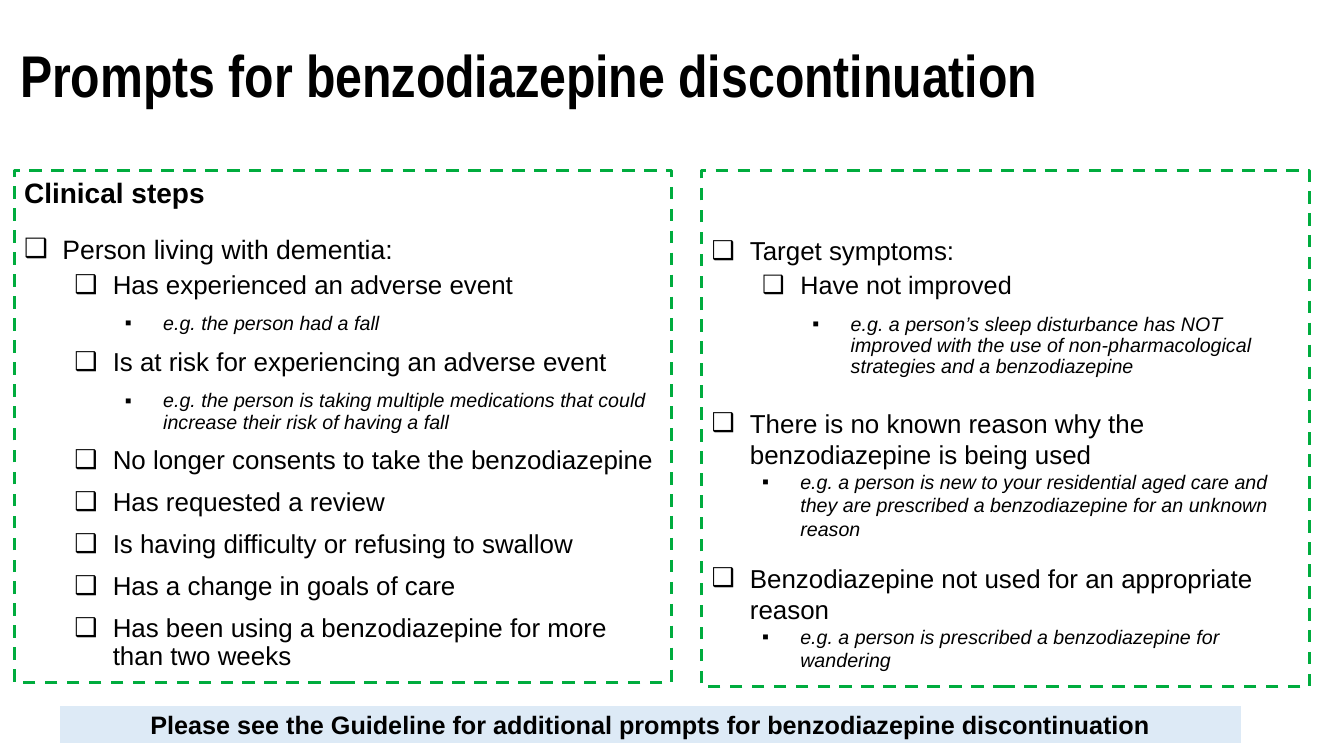
from pptx import Presentation
from pptx.dml.color import RGBColor
from pptx.enum.dml import MSO_LINE
from pptx.enum.shapes import MSO_SHAPE
from pptx.enum.text import MSO_ANCHOR, PP_ALIGN
from pptx.oxml.ns import qn
from pptx.util import Inches, Pt
from lxml import etree


def rgb(value):
    return RGBColor.from_string(value)


def add_text(p, text, size, bold=False, italic=False, font="Arial"):
    r = p.add_run()
    r.text = text
    r.font.size = Pt(size)
    r.font.name = font
    r.font.bold = bold
    r.font.italic = italic
    r.font.color.rgb = rgb("000000")


prs = Presentation()
prs.slide_width, prs.slide_height = Inches(13.33), Inches(7.5)
s = prs.slides.add_slide(prs.slide_layouts[6])

# Title
title = s.shapes.add_textbox(Inches(0.1), Inches(0.41), Inches(10.51), Inches(0.81))
title.text_frame.word_wrap = True
p = title.text_frame.paragraphs[0]
p.line_spacing = 0.9
add_text(p, "Prompts for benzodiazepine discontinuation", 42, bold=True, font="Arial Narrow")

# Prompts: level, bullet, size, line spacing, space before, text
BOX, SQUARE = "❑", "▪"
clinical_steps = [
    (0, None, 20, 1, 0, "Clinical steps"),
    (0, BOX, 19, 1, 17, "Person living with dementia:"),
    (1, BOX, 18.5, 0.9, 5, "Has experienced an adverse event"),
    (2, SQUARE, 14, 0.9, 10, "e.g. the person had a fall"),
    (1, BOX, 18.5, 0.9, 10, "Is at risk for experiencing an adverse event"),
    (2, SQUARE, 14, 0.9, 10, "e.g. the person is taking multiple medications that could "
                             "increase their risk of having a fall"),
    (1, BOX, 18.5, 0.9, 10, "No longer consents to take the benzodiazepine"),
    (1, BOX, 18.5, 0.9, 10, "Has requested a review"),
    (1, BOX, 18.5, 0.9, 10, "Is having difficulty or refusing to swallow"),
    (1, BOX, 18.5, 0.9, 10, "Has a change in goals of care"),
    (1, BOX, 18.5, 0.9, 10, "Has been using a benzodiazepine for more than two weeks"),
]
target_symptoms = [
    (0, BOX, 18.5, 1, 0, "Target symptoms:"),
    (1, BOX, 18, 0.9, 5, "Have not improved"),
    (2, SQUARE, 14, 0.9, 10, "e.g. a person’s sleep disturbance has NOT improved with the use "
                             "of non-pharmacological strategies and a benzodiazepine"),
    (0, BOX, 18.5, 1, 21, "There is no known reason why the benzodiazepine is being used"),
    (1, SQUARE, 14, 1, 0, "e.g. a person is new to your residential aged care and they are "
                          "prescribed a benzodiazepine for an unknown reason"),
    (0, BOX, 18.5, 1, 16, "Benzodiazepine not used for an appropriate reason"),
    (1, SQUARE, 14, 1, 0, "e.g. a person is prescribed a benzodiazepine for wandering"),
]

# Dashed panels: left, width, height, top inset, prompts
panels = [
    (0.14, 6.52, 5.08, 0.05, clinical_steps),
    (6.96, 6.03, 5.12, 0.64, target_symptoms),
]
for left, width, height, inset, prompts in panels:
    sp = s.shapes.add_shape(MSO_SHAPE.RECTANGLE, Inches(left), Inches(1.69),
                            Inches(width), Inches(height))
    sp.shadow.inherit = False
    sp.fill.background()
    sp.line.color.rgb = rgb("00AC3E")
    sp.line.width = Pt(2.25)
    sp.line.dash_style = MSO_LINE.DASH
    tf = sp.text_frame
    tf.word_wrap = True
    tf.vertical_anchor = MSO_ANCHOR.TOP
    tf.margin_top = Inches(inset)
    for i, (level, bullet, size, spacing, before, text) in enumerate(prompts):
        p = tf.add_paragraph() if i else tf.paragraphs[0]
        p.alignment = PP_ALIGN.LEFT
        p.level = level
        p.line_spacing = spacing
        p.space_before = Pt(before)
        if bullet:
            pPr = p._p.get_or_add_pPr()
            pPr.set("marL", str(Inches(0.38 + 0.5 * level)))
            pPr.set("indent", str(Inches(-0.38)))
            color = etree.SubElement(pPr, qn("a:buClr"))
            etree.SubElement(color, qn("a:srgbClr"), val="000000")
            etree.SubElement(pPr, qn("a:buFont"), typeface="Arial")
            etree.SubElement(pPr, qn("a:buChar"), char=bullet)
        add_text(p, text, size, bold=bullet is None, italic=bullet == SQUARE)

# Guideline banner
banner = s.shapes.add_shape(MSO_SHAPE.RECTANGLE, Inches(0.58), Inches(6.99),
                            Inches(11.74), Inches(0.4))
banner.shadow.inherit = False
banner.fill.solid()
banner.fill.fore_color.rgb = rgb("DDEAF6")
banner.line.color.rgb = rgb("FFFFFF")
banner.line.width = Pt(2.25)
banner.text_frame.word_wrap = True
p = banner.text_frame.paragraphs[0]
p.alignment = PP_ALIGN.CENTER
add_text(p, "Please see the Guideline for additional prompts for benzodiazepine discontinuation",
         18, bold=True)

prs.save("out.pptx")
